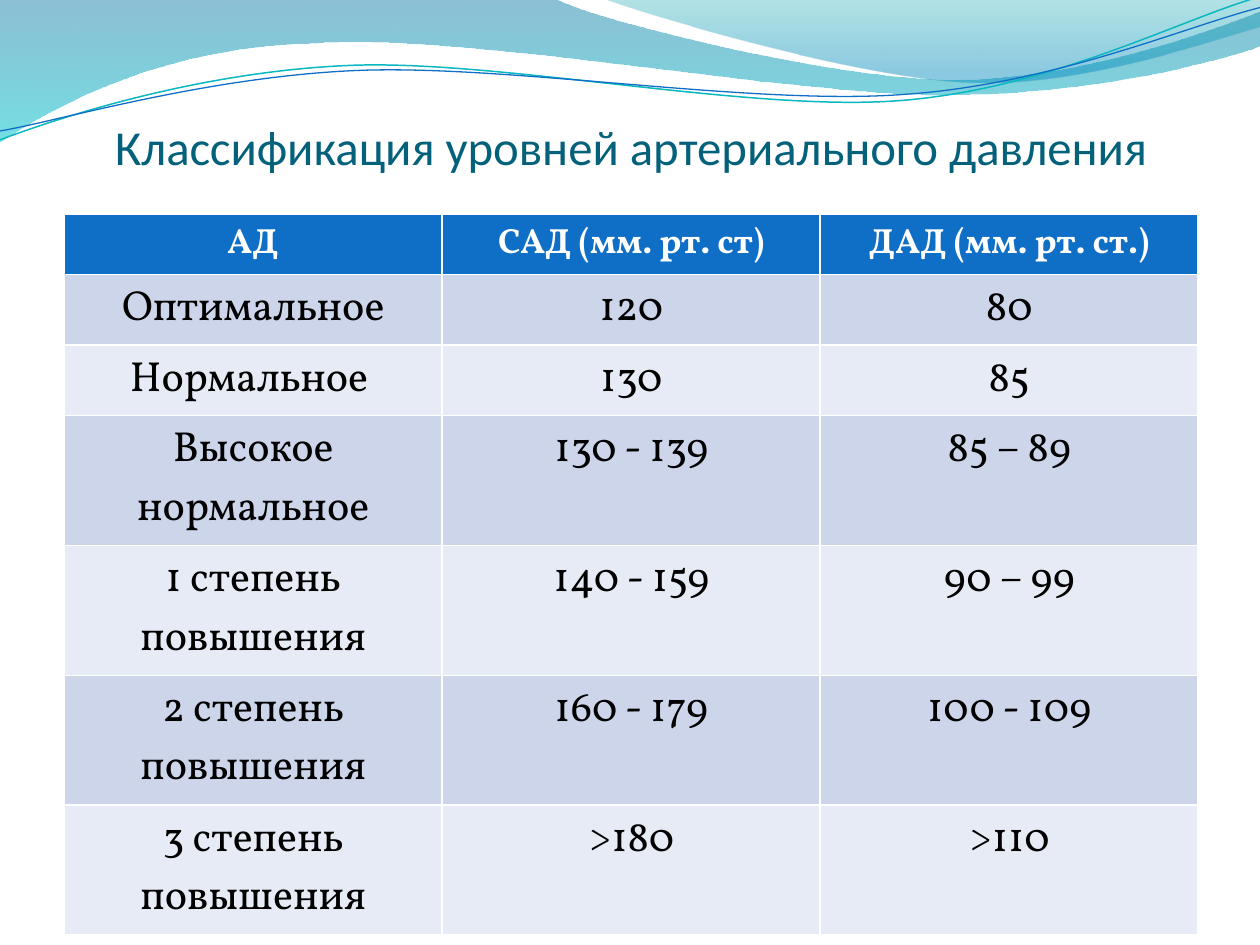
from lxml import etree
from pptx import Presentation
from pptx.dml.color import RGBColor
from pptx.enum.text import MSO_ANCHOR, PP_ALIGN
from pptx.oxml.ns import qn
from pptx.util import Inches, Pt

CENTER = PP_ALIGN.CENTER
BOTTOM = MSO_ANCHOR.BOTTOM
WHITE = RGBColor(0xFF, 0xFF, 0xFF)
BLACK = RGBColor(0, 0, 0)
TEAL = RGBColor(0x04, 0x61, 0x7B)
BLUE = RGBColor(0x0F, 0x6F, 0xC6)
CYAN = RGBColor(0x0A, 0xB8, 0xBF)
DEEP = RGBColor(0x00, 0x74, 0xA1)
AQUA = RGBColor(0x00, 0xC6, 0xCF)
SEA = RGBColor(0x00, 0xA1, 0xA9)
SKY = RGBColor(0x00, 0x8B, 0xBF)
BANDS = [RGBColor(0xCC, 0xD5, 0xEA), RGBColor(0xE7, 0xEB, 0xF5)]

TITLE = "Классификация уровней артериального давления"
ROWS = [
    ("АД", "САД (мм. рт. ст)", "ДАД (мм. рт. ст.)"),
    ("Оптимальное", "120", "80"),
    ("Нормальное ", "130", "85"),
    ("Высокое нормальное", "130 - 139", "85 – 89"),
    ("1 степень повышения", "140 - 159", "90 – 99"),
    ("2 степень повышения", "160 - 179", "100 - 109"),
    ("3 степень повышения", ">180", ">110"),
]
HIGHS = [0.48] + [0.56] * 2 + [1.03] * 4
HEAD = {"name": "Vollkorn", "size": Pt(20), "bold": True}
BODY = {"name": "Vollkorn", "size": Pt(24), "bold": False}
TOP = {"name": "Calibri", "size": Pt(27.9), "bold": False}

WAVES = [
    ([(0, 0), (4.4, -0.01), (4.76, 0.17, 6.64, 0.63, 7.58, 0.63),
      (8.53, 0.63, 9.58, 0.26, 10, 0.09), (10.01, 0.36),
      (9.83, 0.44, 8.7, 0.76, 7.46, 0.75),
      (6.22, 0.75, 3.82, 0.28, 2.57, 0.34),
      (1.29, 0.36, 0.46, 0.83, -0.01, 1.13), (0, 0)],
     [(0, DEEP, 45), (1, AQUA, 55)]),
    ([(4.79, -0.01), (5.09, 0.11, 6.82, 0.62, 7.69, 0.65),
      (8.56, 0.69, 9.61, 0.32, 10, 0.21), (10, 0), (4.79, -0.01)],
     [(0, SEA, 30), (0.8, SKY, 45)]),
]
LINES = [
    ([(0, 1.11), (0.48, 0.93, 1.58, 0.57, 2.77, 0.52),
      (3.95, 0.47, 5.93, 0.89, 7.13, 0.8),
      (8.33, 0.71, 9.38, 0.15, 9.98, -0.02)], CYAN, 0.85),
    ([(0, 1.04), (0.47, 0.96, 1.64, 0.61, 2.83, 0.56),
      (4.03, 0.51, 5.97, 0.84, 7.17, 0.75),
      (8.36, 0.67, 9.41, 0.21, 10, 0.06)], BLUE, 0.75),
]


def draw(slide, path, close):
    dots = [(Inches(seg[i]), Inches(seg[i + 1]))
            for seg in path for i in range(0, len(seg), 2)]
    pen = slide.shapes.build_freeform(*dots[0])
    pen.add_line_segments(dots[1:], close=close)
    shape = pen.convert_to_shape()
    shape.shadow.inherit = False
    legs = iter(list(shape.element.iter(qn("a:lnTo"))))
    for seg in path[1:]:
        group = [next(legs) for _ in range(len(seg) // 2)]
        if len(group) == 3:
            curve = etree.Element(qn("a:cubicBezTo"))
            group[0].addprevious(curve)
            for leg in group:
                curve.append(leg[0])
                leg.getparent().remove(leg)
    return shape


def add_wave(slide, path, stops):
    shape = draw(slide, path, True)
    shape.line.fill.background()
    shape.fill.gradient()
    shape.fill.gradient_angle = 270
    for stop, (pos, color, _) in zip(shape.fill.gradient_stops, stops):
        stop.position = pos
        stop.color.rgb = color
    for node, (_, _, alpha) in zip(shape.element.iter(qn("a:srgbClr")), stops):
        etree.SubElement(node, qn("a:alpha"), val=str(alpha * 1000))


def add_line(slide, path, color, width):
    shape = draw(slide, path, False)
    shape.fill.background()
    shape.line.color.rgb = color
    shape.line.width = Pt(width)


def write(frame, text, style, color):
    para = frame.paragraphs[0]
    para.alignment = CENTER
    run = para.add_run()
    run.text = text
    for key, value in style.items():
        setattr(run.font, key, value)
    run.font.color.rgb = color


def add_title(slide):
    box = slide.shapes.add_textbox(Inches(0.51), Inches(0.68), Inches(9), Inches(0.71))
    frame = box.text_frame
    form = {"word_wrap": True, "vertical_anchor": BOTTOM, "margin_left": 0,
            "margin_top": Inches(0.05), "margin_right": 0, "margin_bottom": 0}
    for key, value in form.items():
        setattr(frame, key, value)
    write(frame, TITLE, TOP, TEAL)


def add_grid(slide):
    table = slide.shapes.add_table(len(ROWS), len(ROWS[0]), Inches(0.51), Inches(1.7),
                                   Inches(9), Inches(sum(HIGHS))).table
    for r, row in enumerate(ROWS):
        table.rows[r].height = Inches(HIGHS[r])
        for c, text in enumerate(row):
            cell = table.cell(r, c)
            cell.fill.solid()
            cell.fill.fore_color.rgb = BANDS[(r - 1) % 2] if r else BLUE
            write(cell.text_frame, text, BODY if r else HEAD, BLACK if r else WHITE)


def main():
    deck = Presentation()
    deck.slide_width, deck.slide_height = Inches(10), Inches(7.5)
    slide = deck.slides.add_slide(deck.slide_layouts[6])
    for wave in WAVES:
        add_wave(slide, *wave)
    for line in LINES:
        add_line(slide, *line)
    add_title(slide)
    add_grid(slide)
    deck.save("out.pptx")


if __name__ == "__main__":
    main()
